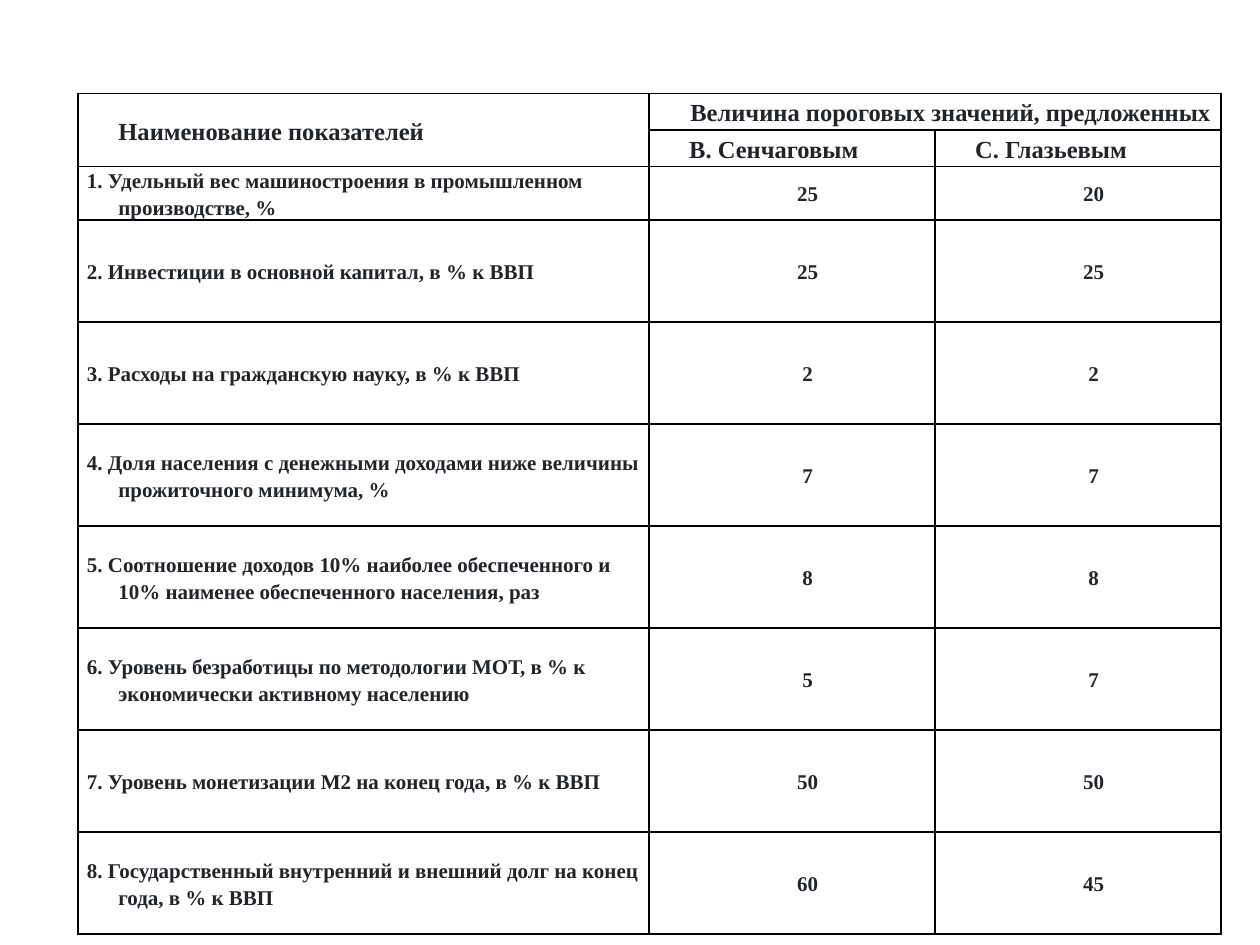
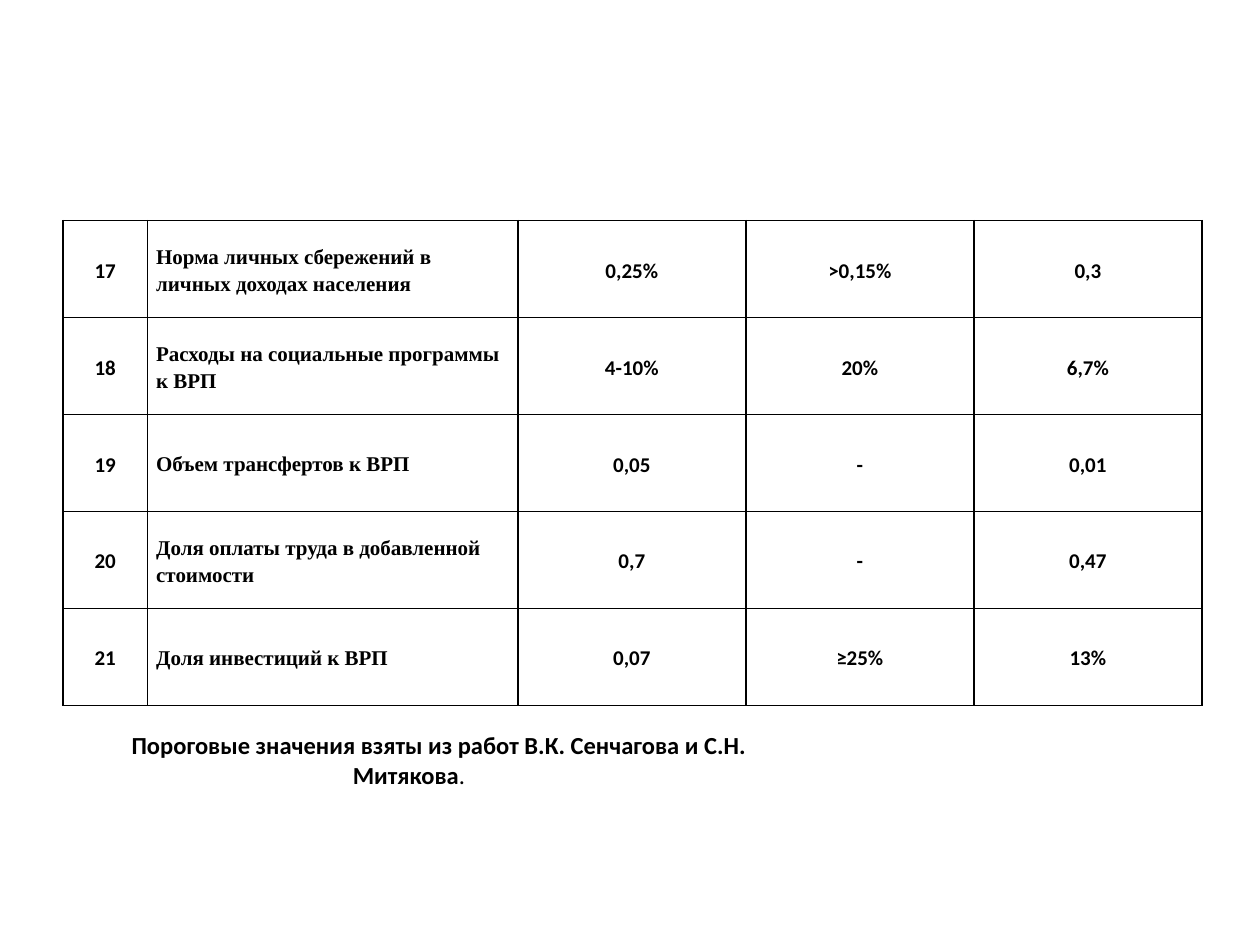
import lxml.etree
import pptx
import pptx.dml.color
import pptx.enum.text
import pptx.oxml.ns
import pptx.util

Inches, Pt = pptx.util.Inches, pptx.util.Pt
ALIGN = pptx.enum.text.PP_ALIGN
MIDDLE = pptx.enum.text.MSO_ANCHOR.MIDDLE

COLORS = {"paper": "FFFFFF", "border": "000000", "ink": "000000", "soft_ink": "212529"}
SERIF, SANS = "Times New Roman", "Calibri"
CELL_FORMAT = {
    "margin_left": Inches(0.07),
    "margin_right": Inches(0.07),
    "margin_top": 0,
    "margin_bottom": 0,
    "vertical_anchor": MIDDLE,
}

HEADER = {"size": 14, "font": SERIF, "color": "soft_ink", "margin": 0.5, "indent": -0.25}
INDICATOR = {**HEADER, "size": 12, "margin": 0.25}
THRESHOLD = {**HEADER, "size": 12, "align": ALIGN.CENTER}
FIGURE = {"size": 12, "font": SANS, "color": "ink", "align": ALIGN.CENTER}
REGION_INDICATOR = {"size": 12, "font": SERIF, "color": "ink"}

THRESHOLDS = [
    ("1. Удельный вес машиностроения в промышленном производстве, %", "25", "20"),
    ("2. Инвестиции в основной капитал, в % к ВВП", "25", "25"),
    ("3. Расходы на гражданскую науку, в % к ВВП", "2", "2"),
    ("4. Доля населения с денежными доходами ниже величины прожиточного минимума, %", "7", "7"),
    ("5. Соотношение доходов 10% наиболее обеспеченного и 10% наименее обеспеченного населения, раз",
     "8", "8"),
    ("6. Уровень безработицы по методологии МОТ, в % к экономически активному населению", "5", "7"),
    ("7. Уровень монетизации М2 на конец года, в % к ВВП", "50", "50"),
    ("8. Государственный внутренний и внешний долг на конец года, в % к ВВП", "60", "45"),
]
REGION_VALUES = [
    ("17", "Норма личных сбережений в личных доходах населения", "0,25%", ">0,15%", "0,3"),
    ("18", "Расходы на социальные программы к ВРП", "4-10%", "20%", "6,7%"),
    ("19", "Объем трансфертов к ВРП", "0,05", "-", "0,01"),
    ("20", "Доля оплаты труда в добавленной стоимости", "0,7", "-", "0,47"),
    ("21", "Доля инвестиций к ВРП", "0,07", "≥25%", "13%"),
]


def rgb(name):
    return pptx.dml.color.RGBColor.from_string(COLORS[name])


def set_attributes(target, values):
    for attribute, value in values.items():
        setattr(target, attribute, value)


def add_run(paragraph, text, style, bold=True):
    run = paragraph.add_run()
    run.text = text
    set_attributes(run.font, {"size": Pt(style["size"]), "name": style["font"], "bold": bold})
    run.font.color.rgb = rgb(style["color"])


def set_indent(paragraph, margin, first_line):
    properties = paragraph._p.get_or_add_pPr()
    properties.set("marL", str(Inches(margin)))
    properties.set("indent", str(Inches(first_line)))


def draw_borders(cell):
    properties = cell._tc.get_or_add_tcPr()
    qn = pptx.oxml.ns.qn
    for side in ("lnL", "lnR", "lnT", "lnB"):
        line = lxml.etree.SubElement(properties, qn(f"a:{side}"), w=str(Pt(1)))
        fill = lxml.etree.SubElement(line, qn("a:solidFill"))
        lxml.etree.SubElement(fill, qn("a:srgbClr"), val=COLORS["border"])


def write_cell(cell, text, style):
    paragraph = cell.text_frame.paragraphs[0]
    set_attributes(paragraph, {"alignment": style.get("align", ALIGN.LEFT), "line_spacing": 1.15})
    set_indent(paragraph, style.get("margin", 0), style.get("indent", 0))
    add_run(paragraph, text, style)


def add_grid(slide, left, top, widths, heights):
    """Add an empty table with plain cells and thin borders all round."""
    grid = slide.shapes.add_table(
        len(heights), len(widths), Inches(left), Inches(top),
        Inches(sum(widths)), Inches(sum(heights))).table
    set_attributes(grid, {"first_row": False, "horz_banding": False})
    for column, width in zip(grid.columns, widths):
        column.width = Inches(width)
    for row, height in zip(grid.rows, heights):
        row.height = Inches(height)
    for cell in grid.iter_cells():
        set_attributes(cell, CELL_FORMAT)
        draw_borders(cell)
        cell.fill.solid()
        cell.fill.fore_color.rgb = rgb("paper")
    return grid


def fill_rows(grid, rows, styles, first_row=0):
    for row_index, values in enumerate(rows, first_row):
        for column_index, (text, style) in enumerate(zip(values, styles)):
            write_cell(grid.cell(row_index, column_index), text, style)


def add_threshold_table(slide, left, top):
    heights = [0.29, 0.29, 0.42] + [0.81] * (len(THRESHOLDS) - 1)
    grid = add_grid(slide, left, top, [4.53, 2.27, 2.27], heights)
    grid.cell(0, 0).merge(grid.cell(1, 0))
    grid.cell(0, 1).merge(grid.cell(0, 2))
    write_cell(grid.cell(0, 0), "Наименование показателей", HEADER)
    write_cell(grid.cell(0, 1), "Величина пороговых значений, предложенных",
               {**HEADER, "align": ALIGN.CENTER})
    for column, author in enumerate(("В. Сенчаговым", "С. Глазьевым"), 1):
        write_cell(grid.cell(1, column), author, {**HEADER, "align": ALIGN.JUSTIFY})
    fill_rows(grid, THRESHOLDS, [INDICATOR, THRESHOLD, THRESHOLD], first_row=2)


def add_region_table(slide, left, top):
    grid = add_grid(slide, left, top, [0.67, 2.94] + [1.81] * 3, [0.77] * len(REGION_VALUES))
    fill_rows(grid, REGION_VALUES, [FIGURE, REGION_INDICATOR] + [FIGURE] * 3)


def add_source_note(slide, left, top, width, height):
    frame = slide.shapes.add_textbox(
        Inches(left), Inches(top), Inches(width), Inches(height)).text_frame
    set_attributes(frame, {"word_wrap": True, "vertical_anchor": MIDDLE,
                           "margin_left": Inches(0.2), "margin_right": Inches(0.2)})
    paragraph = frame.paragraphs[0]
    paragraph.alignment = ALIGN.CENTER
    set_indent(paragraph, 0, 0.48)
    style = {**FIGURE, "size": 14}
    add_run(paragraph, "Пороговые значения взяты из работ В.К. Сенчагова и С.Н. Митякова", style)
    add_run(paragraph, ".", style, bold=False)


def main():
    deck = pptx.Presentation()
    set_attributes(deck, {"slide_width": Inches(10), "slide_height": Inches(7.5)})
    blank = deck.slide_layouts[6]
    add_threshold_table(deck.slides.add_slide(blank), 0.62, 0.74)
    region_slide = deck.slides.add_slide(blank)
    add_region_table(region_slide, 0.5, 1.75)
    add_source_note(region_slide, 0, 5.86, 6.49, 0.34)
    deck.save("out.pptx")


if __name__ == "__main__":
    main()
